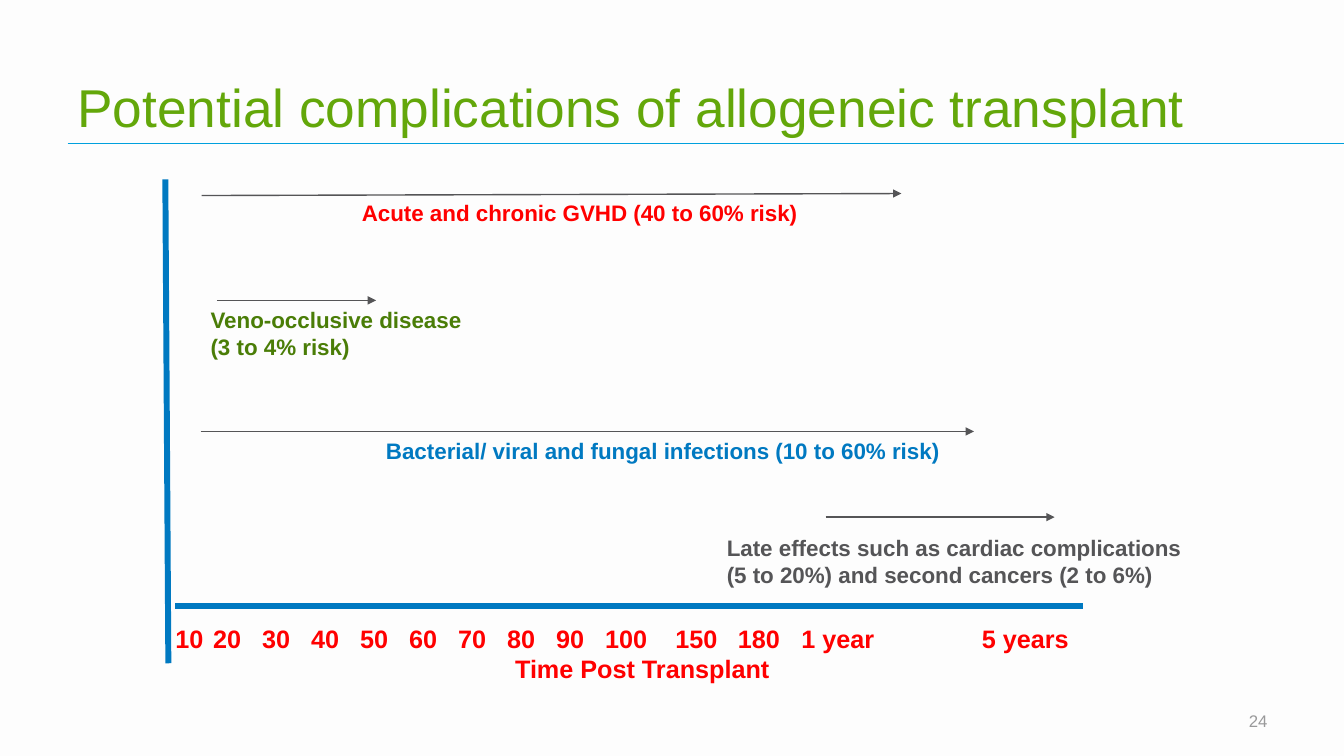
import pptx
import pptx.dml.color
import pptx.enum.shapes
import pptx.enum.text
import pptx.oxml
import pptx.oxml.ns
import pptx.util
from pptx.util import Inches

COLORS = {
    "background": "FDFDFD",
    "title": "63A70A",
    "rule": "00A0DD",
    "blue": "0079C1",
    "red": "FF0000",
    "green": "4A7D07",
    "gray": "555557",
    "number": "99999A",
}

ANCHOR = pptx.enum.text.MSO_ANCHOR
ALIGN = pptx.enum.text.PP_ALIGN

# Arrow start and end, then label box, label text and label color
COMPLICATIONS = [
    ((2, 1.94), (8.94, 1.92), (3.49, 1.93, 4.7, 0.37),
     "Acute and chronic GVHD (40 to 60% risk)", "red"),
    ((2.15, 2.98), (3.73, 2.98), (1.99, 2.99, 2.81, 0.64),
     "Veno-occlusive disease (3 to 4% risk)", "green"),
    ((1.99, 4.28), (9.66, 4.28), (3.73, 4.29, 5.77, 0.37),
     "Bacterial/ viral and fungal infections (10 to 60% risk)", "blue"),
    ((8.19, 5.13), (10.46, 5.13), (7.11, 5.25, 4.89, 0.64),
     "Late effects such as cardiac complications (5 to 20%) "
     "and second cancers (2 to 6%)", "gray"),
]

TIME_LABELS = ["10", "20", "30", "40", "50", "60", "70", "80", "90", "100",
               "150", "180", "1 year", "5 years"]
# Days 20 to 100 are evenly spaced; later times have their own stops
TIME_STOPS = [0.375 + 0.486 * step for step in range(9)] + [4.96, 5.58, 6.21, 8.0]


def rgb(name):
    return pptx.dml.color.RGBColor.from_string(COLORS[name])


def add_line(slide, start, end, color, width, arrow=False):
    connector = slide.shapes.add_connector(
        pptx.enum.shapes.MSO_CONNECTOR.STRAIGHT,
        *[Inches(value) for value in (*start, *end)])
    connector.line.color.rgb = rgb(color)
    connector.line.width = pptx.util.Pt(width)
    properties = connector._element.spPr
    if arrow:
        line = connector.line._get_or_add_ln()
        pptx.oxml.ns.qn("a:tailEnd")
        line.append(pptx.oxml.parse_xml(
            f'<a:tailEnd {pptx.oxml.ns.nsdecls("a")} type="triangle"/>'))
    properties.append(pptx.oxml.parse_xml(
        f'<a:effectLst {pptx.oxml.ns.nsdecls("a")}/>'))


def style_paragraph(paragraph, size, color, bold=False, align=ALIGN.LEFT):
    paragraph.alignment = align
    paragraph.font.name = "Arial"
    paragraph.font.size = pptx.util.Pt(size)
    paragraph.font.bold = bold
    paragraph.font.color.rgb = rgb(color)


def add_text(slide, box, text, size, color, bold=False, align=ALIGN.LEFT,
             anchor=ANCHOR.TOP):
    shape = slide.shapes.add_textbox(*[Inches(value) for value in box])
    frame = shape.text_frame
    frame.word_wrap = True
    frame.vertical_anchor = anchor
    frame.text = text
    style_paragraph(frame.paragraphs[0], size, color, bold, align)
    return frame


def add_tab_stops(paragraph, stops):
    tabs = "".join(f'<a:tab pos="{Inches(stop)}" algn="l"/>' for stop in stops)
    paragraph._p.get_or_add_pPr().insert(0, pptx.oxml.parse_xml(
        f'<a:tabLst {pptx.oxml.ns.nsdecls("a")}>{tabs}</a:tabLst>'))


def add_time_axis(slide):
    add_line(slide, (1.64, 1.78), (1.67, 6.58), "blue", 4.25)
    add_line(slide, (1.74, 6.01), (10.74, 6.01), "blue", 4.25)
    frame = add_text(slide, (1.64, 6.13, 10.28, 0.7), "\t".join(TIME_LABELS),
                     18, "red", bold=True)
    add_tab_stops(frame.paragraphs[0], TIME_STOPS)
    caption = frame.add_paragraph()
    caption.text = "Time Post Transplant"
    caption._p.get_or_add_pPr().set("marL", str(Inches(3.37)))
    style_paragraph(caption, 18, "red", bold=True)


def main():
    presentation = pptx.Presentation()
    presentation.slide_width = Inches(13.33)
    presentation.slide_height = Inches(7.5)
    slide = presentation.slides.add_slide(presentation.slide_layouts[6])
    slide.background.fill.solid()
    slide.background.fill.fore_color.rgb = rgb("background")

    # Title, rule and slide number
    add_line(slide, (0.67, 1.42), (13.33, 1.42), "rule", 0.75)
    add_text(slide, (0.67, 0.17, 12, 1.25),
             "Potential complications of allogeneic transplant",
             38, "title", anchor=ANCHOR.BOTTOM)
    add_text(slide, (12, 6.95, 0.67, 0.4), "24", 12, "number",
             align=ALIGN.RIGHT, anchor=ANCHOR.MIDDLE)

    # Timeline
    add_time_axis(slide)
    for start, end, box, label, color in COMPLICATIONS:
        add_line(slide, start, end, "gray", 1, arrow=True)
        add_text(slide, box, label, 16, color, bold=True)

    presentation.save("out.pptx")


if __name__ == "__main__":
    main()
